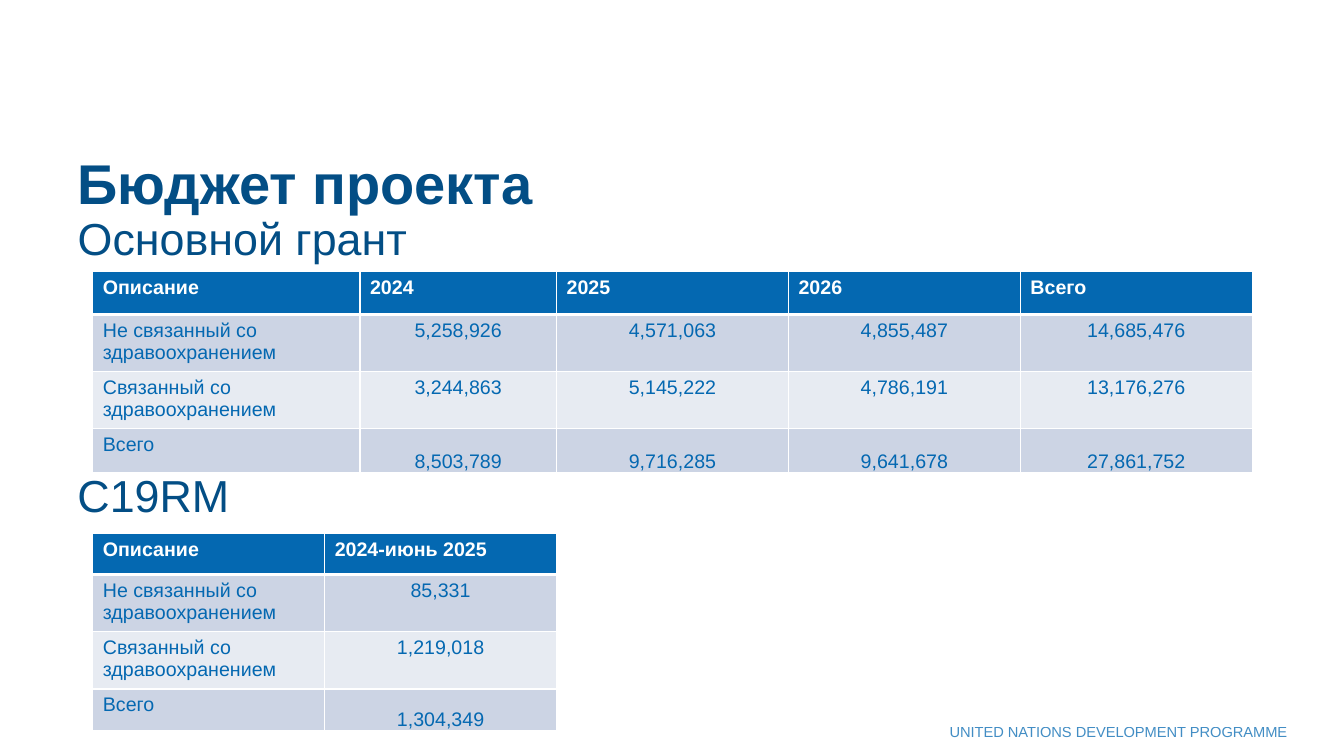
from dataclasses import dataclass

from lxml.etree import SubElement
from pptx import Presentation
from pptx.dml.color import RGBColor
from pptx.enum.text import MSO_ANCHOR as Anchor, MSO_AUTO_SIZE as AutoSize, PP_ALIGN as Align
from pptx.oxml.ns import qn
from pptx.slide import Slide
from pptx.table import _Cell as Cell
from pptx.text.text import Font
from pptx.util import Inches, Pt

FONT = "Arial"
COLORS = {
    "navy": "034E85",
    "blue": "0468B1",
    "white": "FFFFFF",
    "band_dark": "CCD4E4",
    "band_light": "E7EBF2",
}
ROW_LABELS = ["Не связанный со здравоохранением", "Связанный со здравоохранением", "Всего"]


@dataclass
class Budget:
    top: float
    col_widths: list[float]
    row_height: float
    periods: list[str]
    amounts: list[list[str]]


@dataclass
class Caption:
    text: str
    box: tuple[float, float, float, float]
    size: float
    color: str
    align: Align
    anchor: Anchor
    line_spacing: float


MAIN_GRANT = Budget(
    2.69, [2.65, 1.95, 2.3, 2.3, 2.3], 0.43, ["2024", "2025", "2026", "Всего"],
    [
        ["5,258,926", "4,571,063", "4,855,487", "14,685,476"],
        ["3,244,863", "5,145,222", "4,786,191", "13,176,276"],
        ["8,503,789", "9,716,285", "9,641,678", "27,861,752"],
    ],
)
C19RM = Budget(
    5.29, [2.3, 2.3], 0.41, ["2024-июнь 2025"],
    [["85,331"], ["1,219,018"], ["1,304,349"]],
)
C19RM_HEADING = Caption("C19RM", (0.67, 4.48, 11.5, 0.75), 32, "navy",
                        Align.LEFT, Anchor.BOTTOM, 0.9)
FOOTER = Caption("UNITED NATIONS DEVELOPMENT PROGRAMME", (8.55, 7.12, 4.32, 0.28), 10.5,
                 "blue", Align.RIGHT, Anchor.TOP, 1.0)


def style_font(font: Font, size: float, color: str, bold: bool = False) -> None:
    font.name = FONT
    font.size = Pt(size)
    font.bold = bold
    font.color.rgb = RGBColor.from_string(COLORS[color])


def add_title(slide: Slide) -> None:
    title = slide.shapes.title
    title.left, title.top, title.width, title.height = map(Inches, (0.67, 1.55, 11.5, 1.13))
    frame = title.text_frame
    frame.auto_size = AutoSize.NONE
    frame.vertical_anchor = Anchor.BOTTOM
    heading = frame.paragraphs[0]
    heading.alignment = Align.LEFT
    heading.line_spacing = 0.9
    project = heading.add_run()
    project.text = "Бюджет проекта"
    style_font(project.font, 40, "navy", bold=True)
    heading.add_line_break()
    grant = heading.add_run()
    grant.text = "Основной грант"
    style_font(grant.font, 32, "navy")


def add_caption(slide: Slide, caption: Caption) -> Font:
    frame = slide.shapes.add_textbox(*map(Inches, caption.box)).text_frame
    frame.word_wrap = True
    frame.vertical_anchor = caption.anchor
    paragraph = frame.paragraphs[0]
    paragraph.text = caption.text
    paragraph.alignment = caption.align
    paragraph.line_spacing = caption.line_spacing
    style_font(paragraph.font, caption.size, caption.color)
    return paragraph.font


def add_footer(slide: Slide) -> None:
    """Add the footer with its text at 75 % opacity."""
    font = add_caption(slide, FOOTER)
    rgb = font._element.find(f".//{qn('a:srgbClr')}")
    SubElement(rgb, qn("a:alpha"), val="75000")


def set_borders(cell: Cell, bottom_width: float) -> None:
    """Draw white cell borders, placed ahead of the fill as the schema asks."""
    properties = cell._tc.get_or_add_tcPr()
    widths = {"a:lnL": 1, "a:lnR": 1, "a:lnT": 1, "a:lnB": bottom_width}
    for position, (side, width) in enumerate(widths.items()):
        line = SubElement(properties, qn(side), w=str(Pt(width)))
        fill = SubElement(line, qn("a:solidFill"))
        SubElement(fill, qn("a:srgbClr"), val=COLORS["white"])
        properties.insert(position, line)


def add_budget(slide: Slide, budget: Budget) -> None:
    rows = [["Описание", *budget.periods]]
    rows += [[label, *amounts] for label, amounts in zip(ROW_LABELS, budget.amounts)]
    table = slide.shapes.add_table(
        len(rows), len(budget.col_widths), Inches(0.92), Inches(budget.top),
        Inches(sum(budget.col_widths)), Inches(budget.row_height * len(rows)),
    ).table
    for column, width in zip(table.columns, budget.col_widths):
        column.width = Inches(width)
    for r, row in enumerate(rows):
        table.rows[r].height = Inches(budget.row_height)
        is_header, is_total = r == 0, r == len(rows) - 1
        band = "blue" if is_header else "band_dark" if r % 2 else "band_light"
        for c, text in enumerate(row):
            cell = table.cell(r, c)
            cell.fill.solid()
            cell.fill.fore_color.rgb = RGBColor.from_string(COLORS[band])
            set_borders(cell, 3 if is_header else 1)
            paragraph = cell.text_frame.paragraphs[0]
            paragraph.text = text
            paragraph.alignment = Align.LEFT if is_header or c == 0 else Align.CENTER
            style_font(paragraph.font, 14, "white" if is_header else "blue", bold=is_header)
            if is_total and c > 0:
                cell.vertical_anchor = Anchor.BOTTOM
                cell.margin_left = cell.margin_right = cell.margin_top = Inches(0.01)
                cell.margin_bottom = 0


def main() -> None:
    presentation = Presentation()
    presentation.slide_width, presentation.slide_height = Inches(13.33), Inches(7.5)
    slide = presentation.slides.add_slide(presentation.slide_layouts[5])
    add_footer(slide)
    add_title(slide)
    add_budget(slide, MAIN_GRANT)
    add_caption(slide, C19RM_HEADING)
    add_budget(slide, C19RM)
    presentation.save("out.pptx")


if __name__ == "__main__":
    main()
